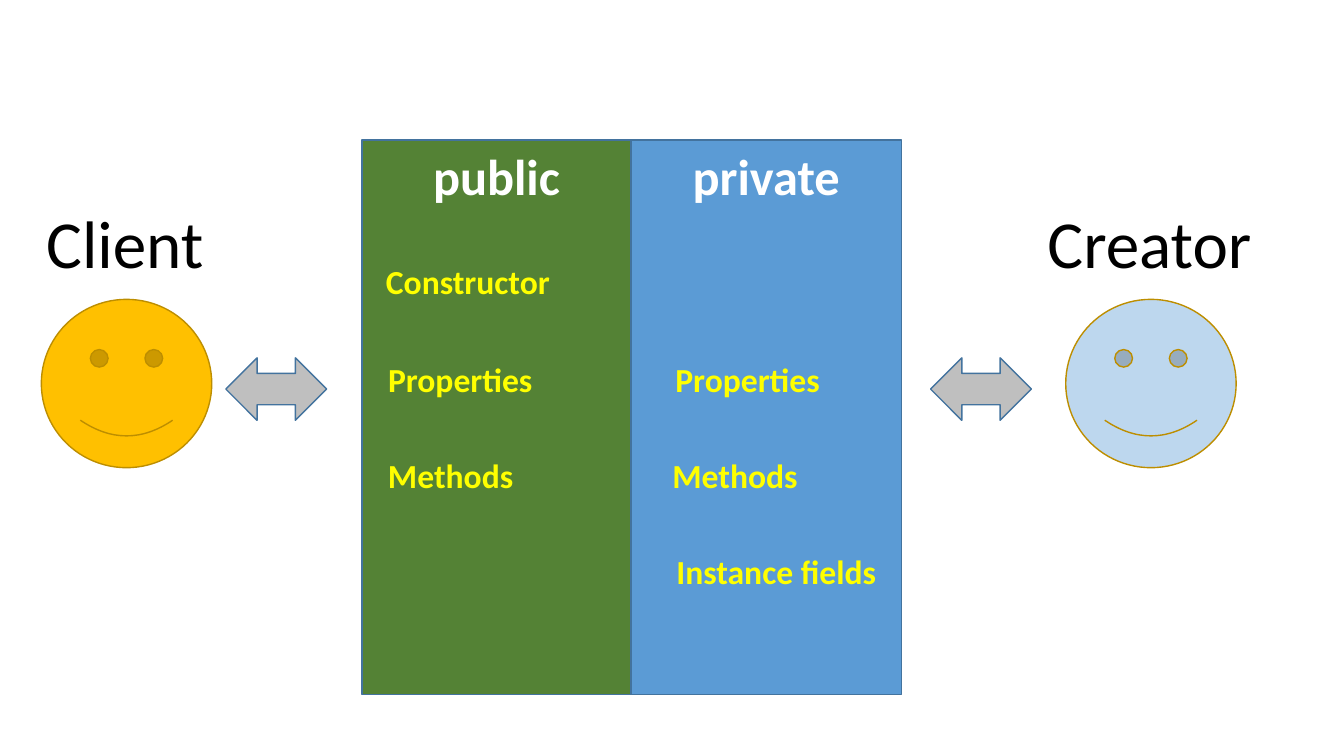
from dataclasses import dataclass

from pptx import Presentation
from pptx.dml.color import RGBColor as RGB
from pptx.enum.shapes import MSO_SHAPE as Kind
from pptx.enum.text import MSO_ANCHOR as Anchor, MSO_AUTO_SIZE as Fit, PP_ALIGN as Align
from pptx.util import Inches, Pt


@dataclass(frozen=True)
class Theme:
    font: str = "Calibri"
    green: str = "548235"
    blue: str = "5B9BD5"
    edge: str = "43739E"
    gold: str = "FFC000"
    pale: str = "BDD7EE"
    rim: str = "BD8E00"
    gray: str = "BFBFBF"
    white: str = "FFFFFF"
    yellow: str = "FFFF00"
    black: str = "000000"
    role: int = 48
    head: int = 36
    item: int = 24


theme = Theme()
deck = Presentation()
deck.slide_width, deck.slide_height = Inches(13.33), Inches(7.5)
slide = deck.slides.add_slide(deck.slide_layouts[6])


def draw(kind, box, fill, line):
    shape = slide.shapes.add_shape(kind, *map(Inches, box))
    shape.shadow.inherit = False
    shape.fill.solid()
    shape.fill.fore_color.rgb = RGB.from_string(fill)
    shape.line.color.rgb = RGB.from_string(line)
    shape.line.width = Pt(1)
    return shape


def write(frame, text, size, color, bold, align=Align.LEFT):
    frame.text = text
    para = frame.paragraphs[0]
    para.alignment = align
    font = para.font
    font.name, font.size, font.bold = theme.font, Pt(size), bold
    font.color.rgb = RGB.from_string(color)


# Class halves
for title, left, width, fill in [
    ("public", 3.59, 2.67, theme.green),
    ("private", 6.26, 2.68, theme.blue),
]:
    half = draw(Kind.RECTANGLE, (left, 1.39, width, 5.5), fill, theme.edge)
    half.text_frame.vertical_anchor = Anchor.TOP
    write(half.text_frame, title, theme.head, theme.white, True, Align.CENTER)

# Faces and arrows on both sides
for face, arrow, fill in [(0.41, 2.24, theme.gold), (10.57, 9.23, theme.pale)]:
    draw(Kind.SMILEY_FACE, (face, 2.97, 1.69, 1.67), fill, theme.rim)
    draw(Kind.LEFT_RIGHT_ARROW, (arrow, 3.55, 1, 0.62), theme.gray, theme.edge)

# Roles and class members
role = (0.91, theme.role, theme.black, False)
item = (0.5, theme.item, theme.yellow, True)
for text, left, top, width, style in [
    ("Client", 0.36, 1.95, 1.78, role),
    ("Creator", 10.29, 1.95, 2.25, role),
    ("Constructor", 3.73, 2.54, 1.84, item),
    ("Properties", 3.75, 3.51, 1.65, item),
    ("Methods", 3.75, 4.46, 1.46, item),
    ("Properties", 6.6, 3.51, 1.65, item),
    ("Methods", 6.57, 4.46, 1.46, item),
    ("Instance fields", 6.61, 5.42, 2.21, item),
]:
    height, size, color, bold = style
    label = slide.shapes.add_textbox(*map(Inches, (left, top, width, height)))
    frame = label.text_frame
    frame.word_wrap = False
    frame.auto_size = Fit.SHAPE_TO_FIT_TEXT
    write(frame, text, size, color, bold)

deck.save("out.pptx")
